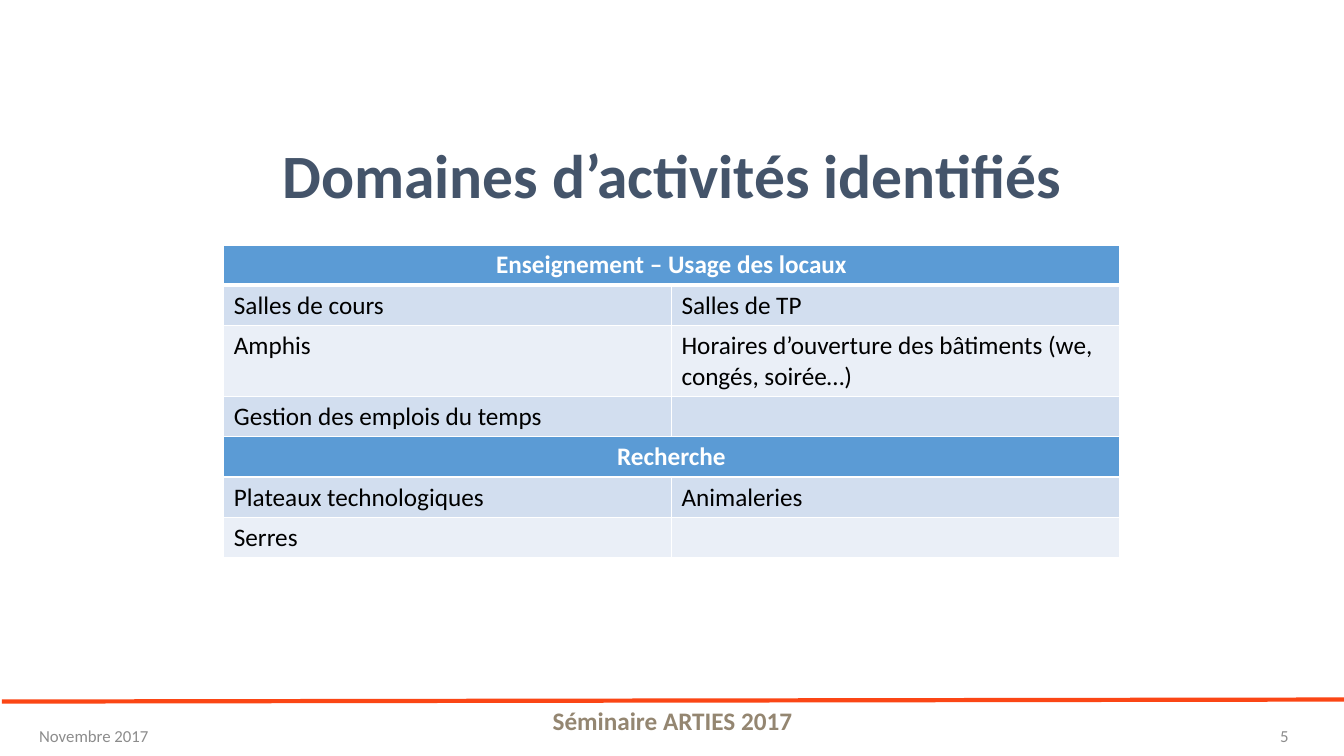
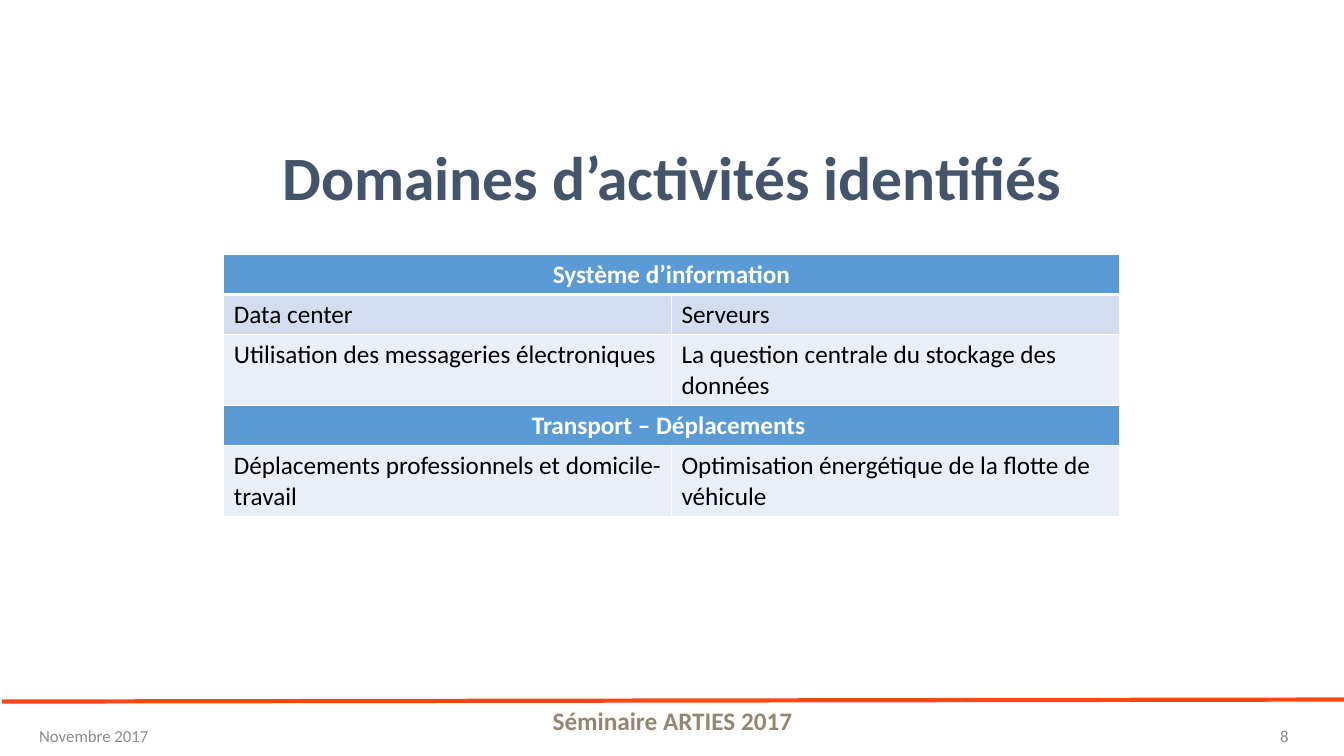
"""Build two slides listing the identified fields of activity."""
from lxml import etree
from pptx import Presentation
from pptx import util as u
from pptx.dml.color import RGBColor
from pptx.enum import shapes, text
from pptx.oxml import ns

FONT = "Calibri"
WHITE = RGBColor(0xFF, 0xFF, 0xFF)
BLACK = RGBColor(0x00, 0x00, 0x00)
SLATE = RGBColor(0x44, 0x54, 0x6A)
GREY = RGBColor(0x8C, 0x8C, 0x8C)
TAUPE = RGBColor(0x94, 0x86, 0x71)
ORANGE = RGBColor(0xFB, 0x46, 0x15)
BLUE = RGBColor(0x5B, 0x9B, 0xD5)
BANDS = [RGBColor(0xEA, 0xEF, 0xF7), RGBColor(0xD2, 0xDE, 0xEF)]

LEFT, CENTER, RIGHT = text.PP_ALIGN.LEFT, text.PP_ALIGN.CENTER, text.PP_ALIGN.RIGHT
TITLE = "Domaines d’activités identifiés"

SLIDES = [
    ("5", 1.05, 2.43, [
        ("Enseignement – Usage des locaux",),
        ("Salles de cours", "Salles de TP"),
        ("Amphis", "Horaires d’ouverture des bâtiments (we, congés, soirée…)"),
        ("Gestion des emplois du temps", ""),
        ("Recherche",),
        ("Plateaux technologiques", "Animaleries"),
        ("Serres", ""),
    ]),
    ("8", 1.07, 2.52, [
        ("Système d’information",),
        ("Data center", "Serveurs"),
        ("Utilisation des messageries électroniques",
         "La question centrale du stockage des données"),
        ("Transport – Déplacements ",),
        ("Déplacements professionnels et domicile-travail",
         "Optimisation énergétique de la flotte de véhicule"),
    ]),
]


def write(tf, words, size, color, bold, align):
    p = tf.paragraphs[0]
    p.alignment = align
    r = p.add_run()
    r.text = words
    r.font.name, r.font.size, r.font.bold = FONT, u.Pt(size), bold
    r.font.color.rgb = color
    return p


def set_borders(cell, top, bottom):
    tcPr = cell._tc.get_or_add_tcPr()
    for side, width in (("L", 1), ("R", 1), ("T", top), ("B", bottom)):
        ln = etree.SubElement(tcPr, ns.qn("a:ln" + side), w=str(u.Pt(width)))
        fill = etree.SubElement(ln, ns.qn("a:solidFill"))
        etree.SubElement(fill, ns.qn("a:srgbClr"), val=str(WHITE))


prs = Presentation()
prs.slide_width, prs.slide_height = u.Inches(13.33), u.Inches(7.5)

for number, title_top, table_top, rows in SLIDES:
    s = prs.slides.add_slide(prs.slide_layouts[6])

    rule = s.shapes.add_connector(shapes.MSO_CONNECTOR.STRAIGHT, u.Inches(0.02),
                                  u.Inches(6.96), u.Inches(13.35), u.Inches(6.94))
    rule.line.color.rgb, rule.line.width = ORANGE, u.Pt(3)
    etree.SubElement(rule._element.spPr, ns.qn("a:effectLst"))

    for words, box, size, color, bold, align in (
        (TITLE, (0.92, title_top, 11.5, 1.45), 44, SLATE, True, CENTER),
        ("Novembre 2017", (0.29, 7.1, 3, 0.4), 12, GREY, False, LEFT),
        ("Séminaire ARTIES 2017", (0.92, 6.95, 11.5, 0.4), 18, TAUPE, True, CENTER),
        (number, (9.88, 7.1, 3, 0.4), 12, GREY, False, RIGHT),
    ):
        tf = s.shapes.add_textbox(*map(u.Inches, box)).text_frame
        tf.word_wrap = True
        tf.vertical_anchor = text.MSO_ANCHOR.MIDDLE
        p = write(tf, words, size, color, bold, align)
        if words == TITLE:
            p.line_spacing = 0.9

    table = s.shapes.add_table(len(rows), 2, u.Inches(2.22), u.Inches(table_top),
                               u.Inches(8.88), u.Inches(0.4 * len(rows))).table
    for i, row in enumerate(rows):
        header = len(row) == 1
        for cell in table.rows[i].cells:
            set_borders(cell, 3 if i == 1 else 1, 3 if i == 0 else 1)
            cell.fill.solid()
            cell.fill.fore_color.rgb = BLUE if header else BANDS[i % 2]
        if header:
            table.cell(i, 0).merge(table.cell(i, 1))
        for j, words in enumerate(row):
            if words:
                write(table.cell(i, j).text_frame, words, 18,
                      WHITE if header else BLACK, header, CENTER if header else LEFT)

prs.save("out.pptx")
